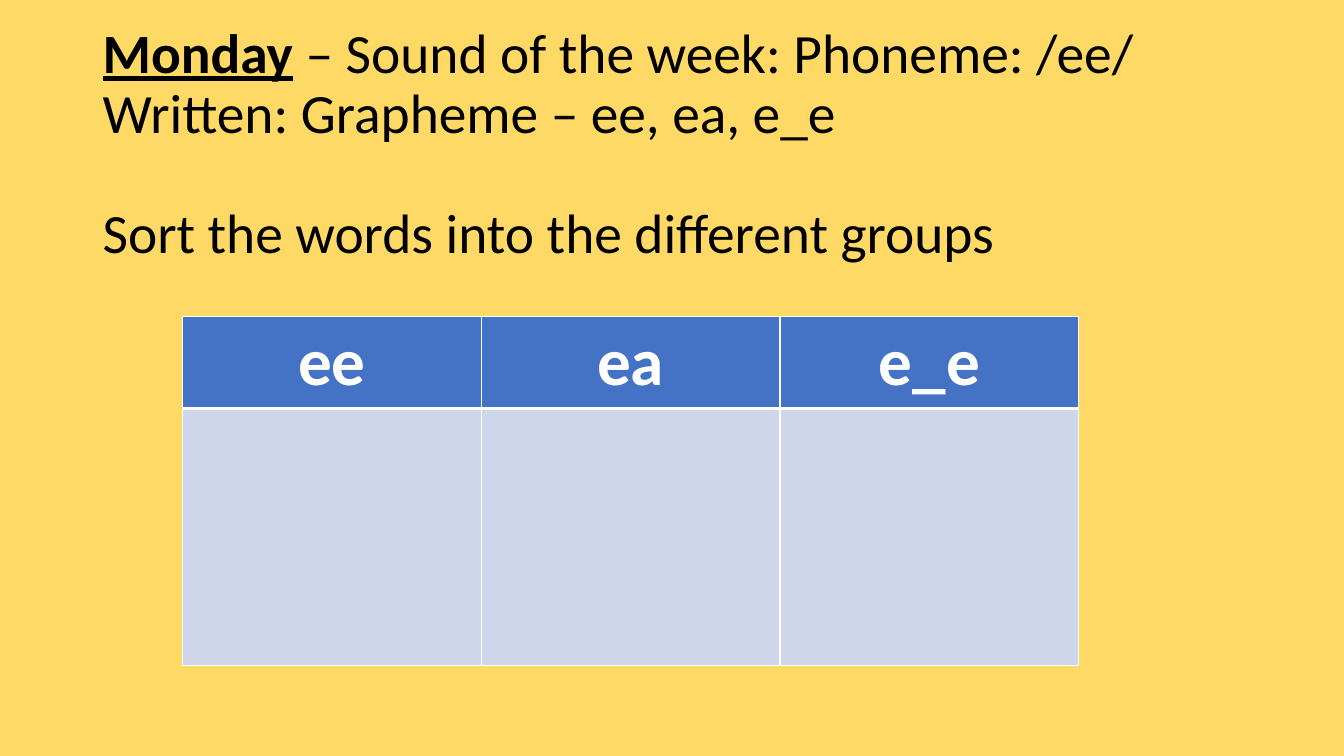
from lxml import etree
from pptx import Presentation
from pptx.dml.color import RGBColor
from pptx.enum import text
from pptx.oxml import ns
from pptx.util import Inches, Pt

GOLD = RGBColor(0xFF, 0xD9, 0x66)
BLUE = RGBColor(0x44, 0x72, 0xC4)
PALE = RGBColor(0xCF, 0xD5, 0xEA)
WHITE = RGBColor(0xFF, 0xFF, 0xFF)
BLACK = RGBColor(0, 0, 0)
FONT = "Calibri"
SOUNDS = ["ee", "ea", "e_e"]


def style(run, size, color, bold=False):
    font = run.font
    font.name, font.size, font.bold = FONT, Pt(size), bold
    font.color.rgb = color


def add_title(slide, left, top, width, height):
    box = slide.shapes.add_textbox(left, top, width, height)
    frame = box.text_frame
    frame.word_wrap = True
    frame.auto_size = text.MSO_AUTO_SIZE.NONE
    frame.vertical_anchor = text.MSO_ANCHOR.MIDDLE
    frame.text = ("Monday\n"
                  "Written: Grapheme – ee, ea, e_e\n"
                  "Sort the words into the different groups")
    first, _, task = frame.paragraphs
    first.add_run().text = " – Sound of the week: Phoneme: /ee/"
    for para in frame.paragraphs:
        para.line_spacing = 0.9
        for run in para.runs:
            style(run, 39.6, BLACK)
    day = first.runs[0].font
    day.bold = day.underline = True
    task.space_before = Pt(43.5)


def set_edges(cell, top, bottom):
    """Draw white cell borders; the sides are 1 pt wide."""
    props = cell._tc.get_or_add_tcPr()
    widths = {"L": 1, "R": 1, "T": top, "B": bottom}
    for spot, (side, width) in enumerate(widths.items()):
        line = etree.Element(ns.qn("a:ln" + side), w=str(Pt(width)))
        fill = etree.SubElement(line, ns.qn("a:solidFill"))
        etree.SubElement(fill, ns.qn("a:srgbClr"), val=str(WHITE))
        props.insert(spot, line)


def add_groups(slide, left, top, width, height):
    """Place the sorting table: one column for each spelling."""
    table = slide.shapes.add_table(2, len(SOUNDS), left, top,
                                   width, height).table
    head = Inches(0.9)
    table.rows[0].height = head
    table.rows[1].height = height - head
    for col, sound in enumerate(SOUNDS):
        label, blank = table.cell(0, col), table.cell(1, col)
        for cell, color in ((label, BLUE), (blank, PALE)):
            cell.fill.solid()
            cell.fill.fore_color.rgb = color
        set_edges(label, 1, 3)
        set_edges(blank, 3, 1)
        label.text = sound
        para = label.text_frame.paragraphs[0]
        para.alignment = text.PP_ALIGN.CENTER
        style(para.runs[0], 48, WHITE, True)


def main():
    deck = Presentation()
    deck.slide_width, deck.slide_height = Inches(13.33), Inches(7.5)
    slide = deck.slides.add_slide(deck.slide_layouts[6])
    back = slide.background.fill
    back.solid()
    back.fore_color.rgb = GOLD
    add_title(slide, Inches(0.92), Inches(0.72), Inches(11.5), Inches(1.45))
    add_groups(slide, Inches(1.81), Inches(3.14), Inches(8.89), Inches(3.45))
    deck.save("out.pptx")


if __name__ == "__main__":
    main()
